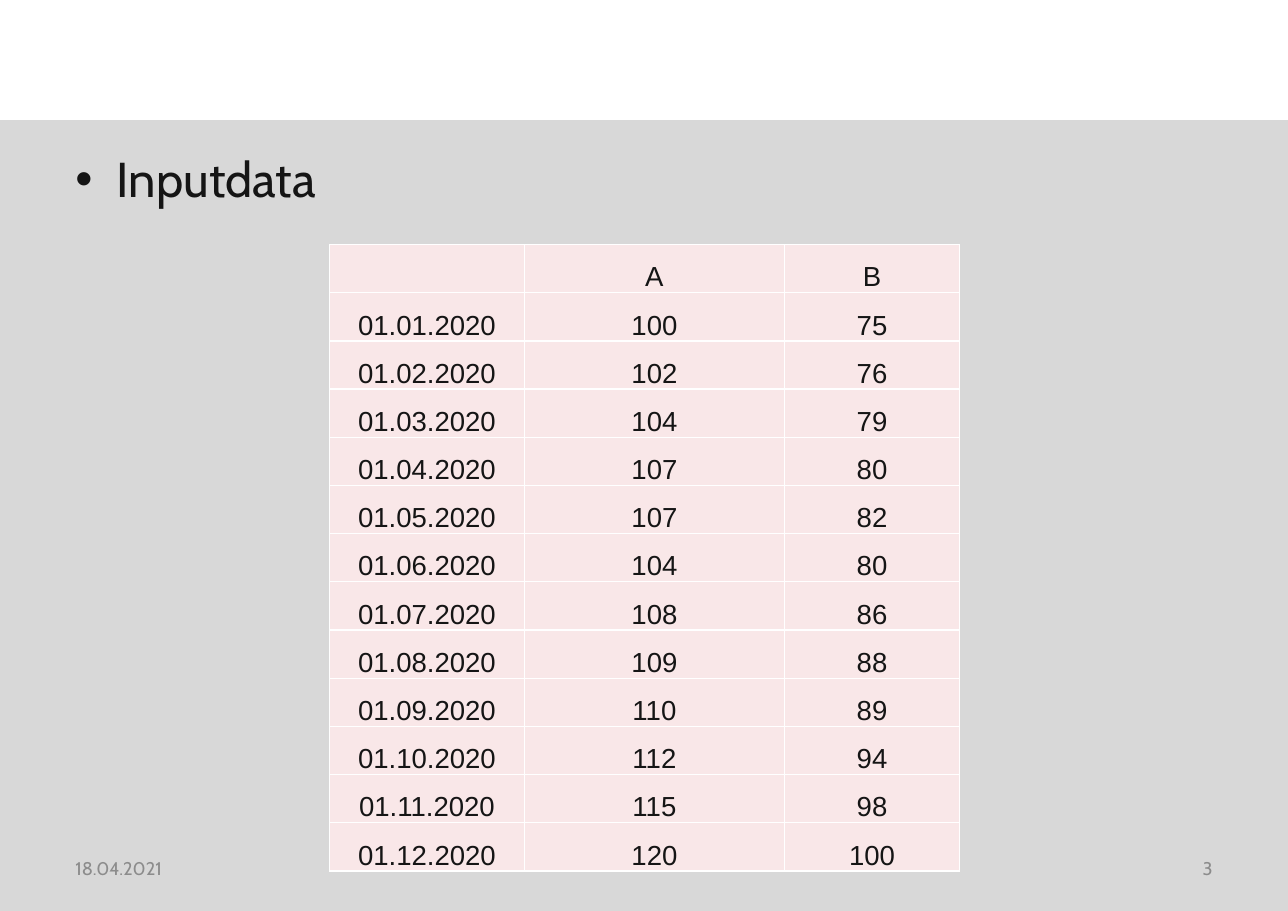
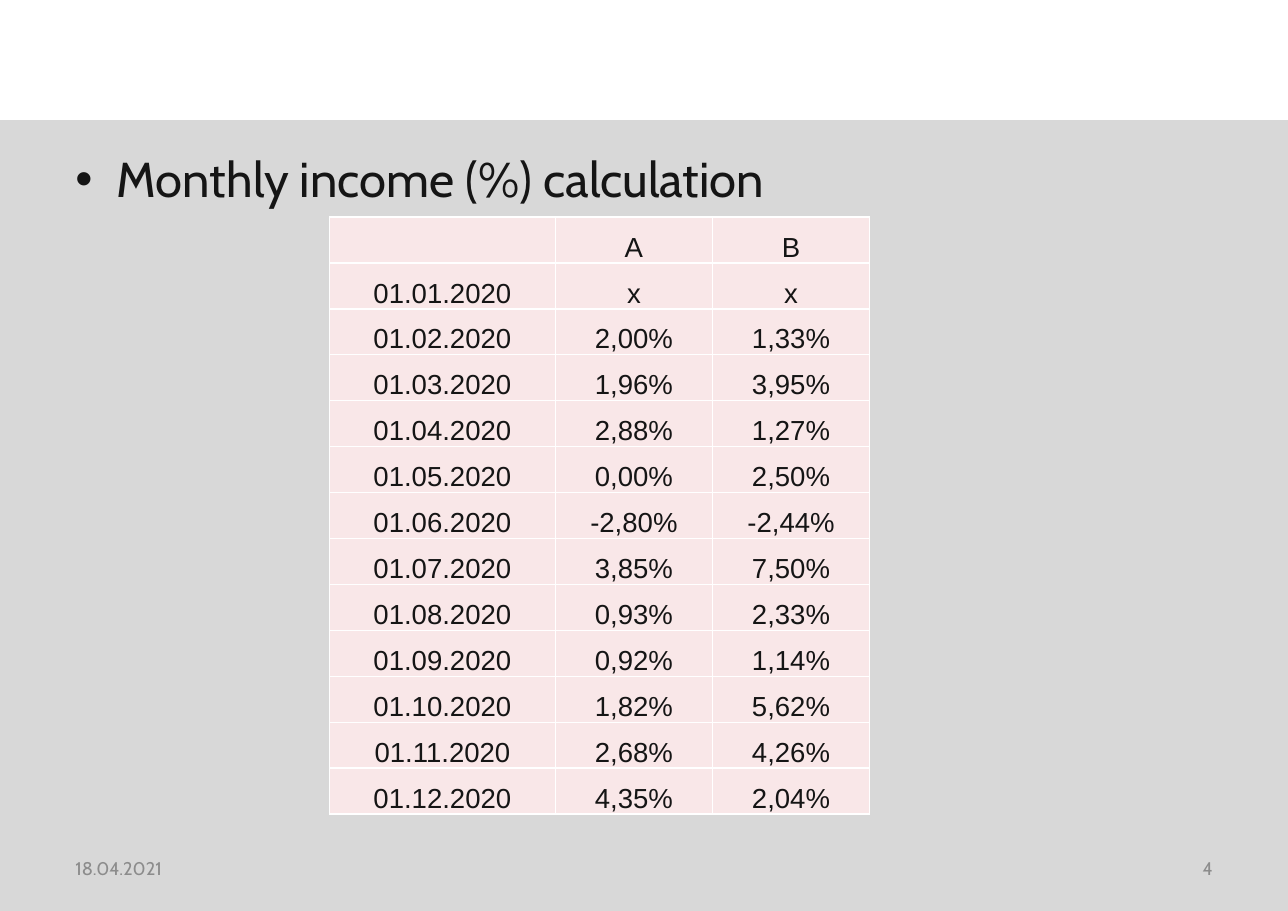
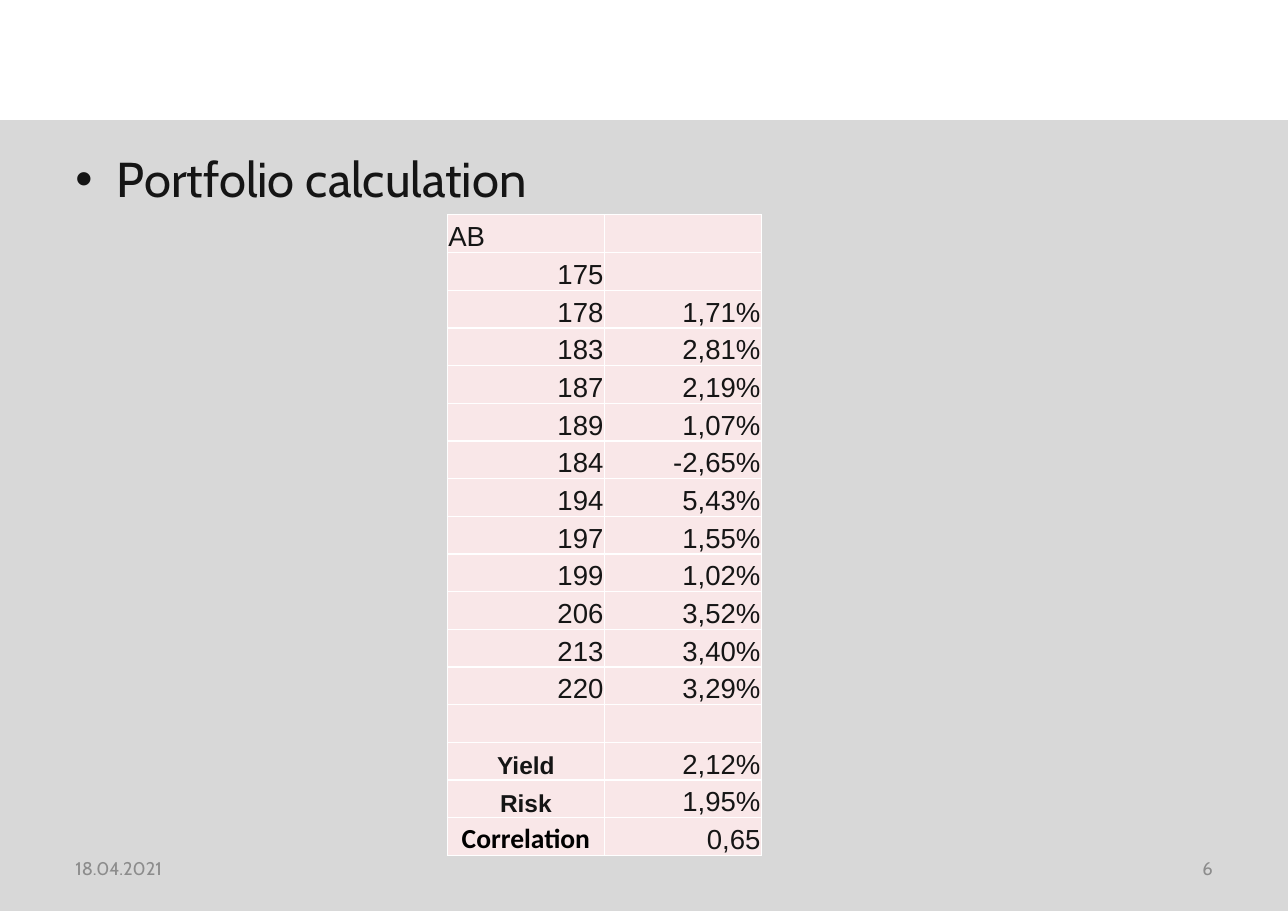
from dataclasses import dataclass, field

from lxml import etree
from pptx import Presentation
from pptx import util as u
from pptx.dml.color import RGBColor
from pptx.enum import shapes, text
from pptx.oxml.ns import qn

COLORS = {
    "band": "D8D8D8",
    "ink": "151515",
    "muted": "8C8C8C",
    "cell": "F9E7E8",
    "border": "FFFFFF",
    "black": "000000",
}
WIDTH, HEIGHT = u.Inches(11.69), u.Inches(8.27)
ALIGN = text.PP_ALIGN
MARGIN = 5
FOOTER_WIDTH = 23.35
DATE = "18.04.2021"
DAYS = [f"01.{month:02}.2020" for month in range(1, 13)]


@dataclass(frozen=True)
class Frame:
    """A rectangle in percent of the slide's width and height."""
    left: float
    top: float
    width: float
    height: float

    def lengths(self) -> tuple[int, int, int, int]:
        return (across(self.left), down(self.top),
                across(self.width), down(self.height))


@dataclass(frozen=True)
class Style:
    size: int = 18
    font: str = "Arial"
    color: str = "ink"
    bold: bool = False
    align: ALIGN = ALIGN.CENTER


@dataclass(frozen=True)
class Sheet:
    """One slide: its heading and its table, in percent of the slide."""
    heading: str
    number: int
    left: float
    top: float
    height: float
    columns: list[float]
    rows: list[tuple[str, ...]]
    style: Style = Style()
    exceptions: dict[str, Style] = field(default_factory=dict)


BAND = Frame(0, 13.18, 100, 86.82)
BODY = Frame(MARGIN, 15.72, 90, 73.64)
DATE_FRAME = Frame(MARGIN, 92.62, FOOTER_WIDTH, 5.32)
NUMBER_FRAME = Frame(100 - MARGIN - FOOTER_WIDTH, 92.62, FOOTER_WIDTH, 5.32)

HEADING_STYLE = Style(32, "Cabin", align=ALIGN.LEFT)
DATE_STYLE = Style(12, "Cabin", "muted", align=ALIGN.LEFT)
NUMBER_STYLE = Style(12, "Cabin", "muted", align=ALIGN.RIGHT)
LABEL_STYLE = Style(16, bold=True)

PRICES_A = "100 102 104 107 107 104 108 109 110 112 115 120".split()
PRICES_B = "75 76 79 80 82 80 86 88 89 94 98 100".split()
INCOME_A = ("x 2,00% 1,96% 2,88% 0,00% -2,80% 3,85% 0,93% 0,92% "
            "1,82% 2,68% 4,35%").split()
INCOME_B = ("x 1,33% 3,95% 1,27% 2,50% -2,44% 7,50% 2,33% 1,14% "
            "5,62% 4,26% 2,04%").split()
PORTFOLIO = "175 178 183 187 189 184 194 197 199 206 213 220".split()
PORTFOLIO_INCOME = ["", *("1,71% 2,81% 2,19% 1,07% -2,65% 5,43% 1,55% 1,02% "
                          "3,52% 3,40% 3,29%").split()]

SHEETS = [
    Sheet("Inputdata", 3, 25.58, 26.84, 68.8, [15.14, 20.19, 13.6],
          [("", "A", "B"), *zip(DAYS, PRICES_A, PRICES_B)]),
    Sheet("Monthly income (%) calculation", 4, 25.58, 23.82, 65.54,
          [17.54, 12.2, 12.2],
          [("", "A", "B"), *zip(DAYS, INCOME_A, INCOME_B)]),
    Sheet("Portfolio calculation", 6, 34.73, 23.58, 70.37, [12.2, 12.2],
          [("AB", ""), *zip(PORTFOLIO, PORTFOLIO_INCOME), ("", ""),
           ("Yield", "2,12%"), ("Risk", "1,95%"), ("Correlation", "0,65")],
          Style(align=ALIGN.RIGHT),
          {"AB": Style(align=ALIGN.LEFT),
           "Yield": LABEL_STYLE,
           "Risk": LABEL_STYLE,
           "Correlation": Style(18, "Calibri", "black", True)}),
]


def across(percent: float) -> int:
    return round(WIDTH * percent / 100)


def down(percent: float) -> int:
    return round(HEIGHT * percent / 100)


def color(name: str) -> RGBColor:
    return RGBColor.from_string(COLORS[name])


def place(shape, frame: Frame) -> None:
    shape.left, shape.top, shape.width, shape.height = frame.lengths()


def write(frame, words: str, style: Style) -> None:
    frame.text = words
    para = frame.paragraphs[0]
    para.alignment = style.align
    para.space_before = u.Pt(0)
    for span in para.runs:
        span.font.size = u.Pt(style.size)
        span.font.name = style.font
        span.font.bold = style.bold
        span.font.color.rgb = color(style.color)


def prepare_layout(deck):
    """Keep only the list placeholder of the layout, moved into place."""
    layout = deck.slide_layouts.get_by_name("Title and Content")
    for holder in list(layout.placeholders):
        if holder.placeholder_format.idx == 1:
            place(holder, BODY)
        else:
            layout.shapes.element.remove(holder.element)
    return layout


def add_band(page) -> None:
    """Draw the grey band behind everything else on the page."""
    band = page.shapes.add_shape(shapes.MSO_SHAPE.RECTANGLE, *BAND.lengths())
    band.shadow.inherit = False
    band.fill.solid()
    band.fill.fore_color.rgb = color("band")
    band.line.fill.background()
    page.shapes.element.insert(2, band.element)


def add_footer(page, frame: Frame, words: str, style: Style) -> None:
    box = page.shapes.add_textbox(*frame.lengths())
    box.text_frame.word_wrap = True
    box.text_frame.vertical_anchor = text.MSO_ANCHOR.MIDDLE
    write(box.text_frame, words, style)


def add_borders(cell) -> None:
    properties = cell._tc.get_or_add_tcPr()
    for side in ("lnL", "lnR", "lnT", "lnB"):
        line = etree.SubElement(properties, qn(f"a:{side}"), w=str(u.Pt(1)))
        fill = etree.SubElement(line, qn("a:solidFill"))
        etree.SubElement(fill, qn("a:srgbClr"), val=COLORS["border"])


def fill_cell(cell, words: str, style: Style) -> None:
    cell.margin_left = cell.margin_right = cell.margin_top = u.Inches(0.01)
    cell.margin_bottom = 0
    cell.vertical_anchor = text.MSO_ANCHOR.BOTTOM
    add_borders(cell)
    cell.fill.solid()
    cell.fill.fore_color.rgb = color("cell")
    write(cell.text_frame, words, style)


def add_data_table(page, sheet: Sheet) -> None:
    frame = Frame(sheet.left, sheet.top, sum(sheet.columns), sheet.height)
    table = page.shapes.add_table(
        len(sheet.rows), len(sheet.columns), *frame.lengths()).table
    table.first_row = table.horz_banding = False
    for column, width in zip(table.columns, sheet.columns):
        column.width = across(width)
    for row, entries in zip(table.rows, sheet.rows):
        for cell, words in zip(row.cells, entries):
            fill_cell(cell, words, sheet.exceptions.get(words, sheet.style))


def add_page(deck, layout, sheet: Sheet) -> None:
    page = deck.slides.add_slide(layout)
    add_band(page)
    write(page.placeholders[1].text_frame, sheet.heading, HEADING_STYLE)
    add_footer(page, DATE_FRAME, DATE, DATE_STYLE)
    add_footer(page, NUMBER_FRAME, str(sheet.number), NUMBER_STYLE)
    add_data_table(page, sheet)


def main() -> None:
    deck = Presentation()
    deck.slide_width, deck.slide_height = WIDTH, HEIGHT
    layout = prepare_layout(deck)
    for sheet in SHEETS:
        add_page(deck, layout, sheet)
    deck.save("out.pptx")


if __name__ == "__main__":
    main()
